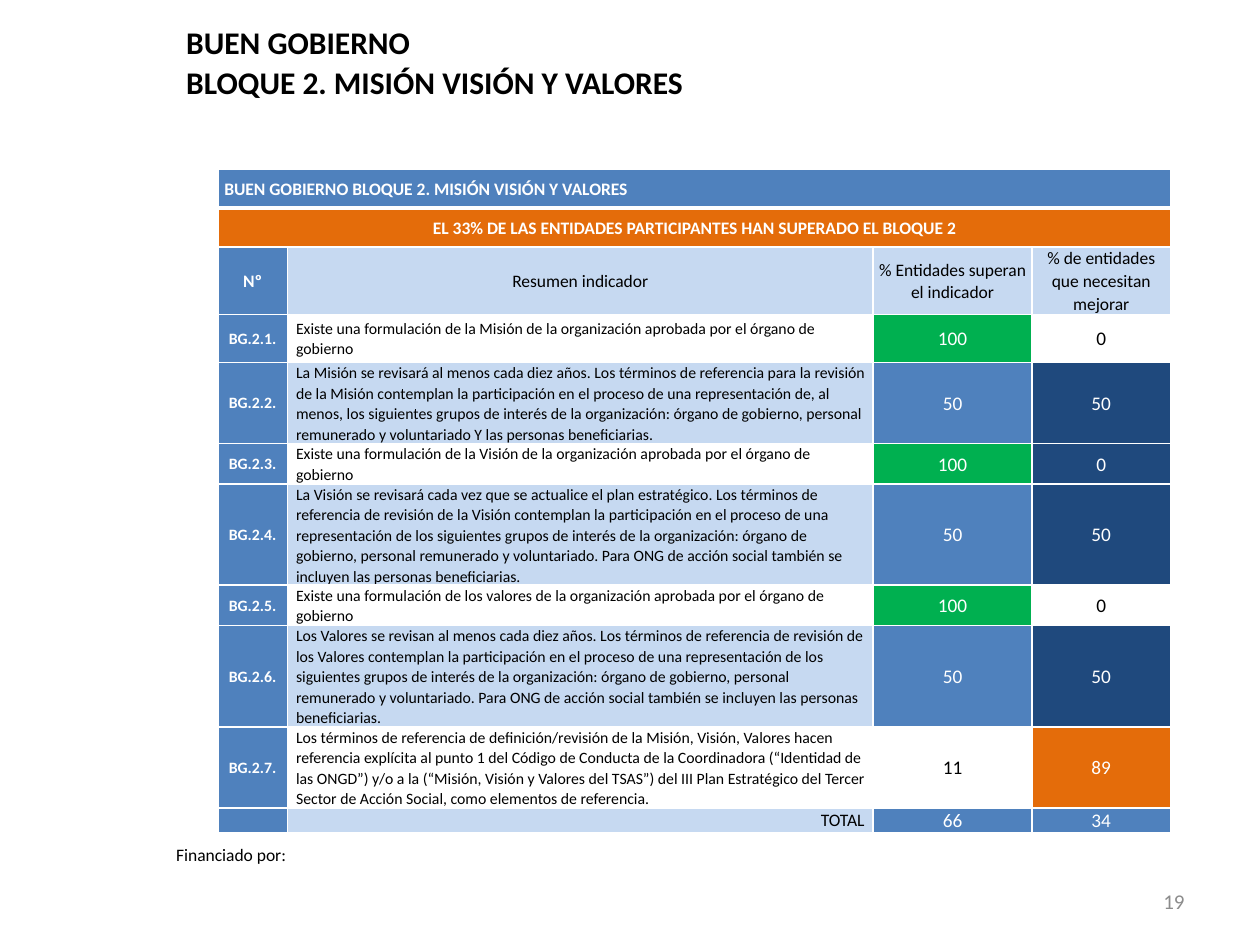
from lxml import etree
from pptx import Presentation
from pptx.dml.color import RGBColor
from pptx.enum.text import MSO_ANCHOR as Anchor, PP_ALIGN as Align
from pptx.oxml.ns import qn
from pptx.util import Inches, Pt

FONT = "Calibri"
WHITE = RGBColor(0xFF, 0xFF, 0xFF)
BLACK = RGBColor(0, 0, 0)
GRAY = RGBColor(0x8C, 0x8C, 0x8C)
BLUE = RGBColor(0x4F, 0x81, 0xBD)
NAVY = RGBColor(0x1F, 0x49, 0x7D)
PALE = RGBColor(0xC6, 0xD9, 0xF1)
GREEN = RGBColor(0x00, 0xB0, 0x50)
ORANGE = RGBColor(0xE4, 0x6C, 0x0A)

TITLE = "BLOQUE 2. MISIÓN VISIÓN Y VALORES"
COL_WIDTHS = [0.55, 4.65, 1.26, 1.1]
ROW_HEIGHTS = [0.31, 0.31, 0.53, 0.38, 0.64, 0.32, 0.8, 0.32, 0.8, 0.64, 0.19]
HEADINGS = ["Nº", "Resumen indicador", "% Entidades superan el indicador",
            "% de entidades que necesitan mejorar"]
# Summary, % that pass and its fill, % to improve and its fill
INDICATORS = [
    ("Existe una formulación de la Misión de la organización aprobada por el "
     "órgano de gobierno", 100, GREEN, 0, WHITE),
    ("La Misión se revisará al menos cada diez años. Los términos de referencia "
     "para la revisión de la Misión contemplan la participación en el proceso de "
     "una representación de, al menos, los siguientes grupos de interés de la "
     "organización: órgano de gobierno, personal remunerado y voluntariado Y las "
     "personas beneficiarias.", 50, BLUE, 50, NAVY),
    ("Existe una formulación de la Visión de la organización aprobada por el "
     "órgano de gobierno", 100, GREEN, 0, NAVY),
    ("La Visión se revisará cada vez que se actualice el plan estratégico. Los "
     "términos de referencia de revisión de la Visión contemplan la participación "
     "en el proceso de una representación de los siguientes grupos de interés de "
     "la organización: órgano de gobierno, personal remunerado y voluntariado. "
     "Para ONG de acción social también se incluyen las personas beneficiarias.",
     50, BLUE, 50, NAVY),
    ("Existe una formulación de los valores de la organización aprobada por el "
     "órgano de gobierno", 100, GREEN, 0, WHITE),
    ("Los Valores se revisan al menos cada diez años. Los términos de referencia "
     "de revisión de los Valores contemplan la participación en el proceso de una "
     "representación de los siguientes grupos de interés de la organización: "
     "órgano de gobierno, personal remunerado y voluntariado. Para ONG de acción "
     "social también se incluyen las personas beneficiarias.", 50, BLUE, 50, NAVY),
    ("Los términos de referencia de definición/revisión de la Misión, Visión, "
     "Valores hacen referencia explícita al punto 1 del Código de Conducta de la "
     "Coordinadora (“Identidad de las ONGD”) y/o a la (“Misión, Visión y Valores "
     "del TSAS”) del III Plan Estratégico del Tercer Sector de Acción Social, "
     "como elementos de referencia.", 11, WHITE, 89, ORANGE),
]


def write(tf, text, size=10, color=BLACK, bold=False, align=Align.LEFT, spacing=None):
    """Fill a text frame, one paragraph for each line of text."""
    for i, line in enumerate(text.split("\n")):
        p = tf.add_paragraph() if i else tf.paragraphs[0]
        p.alignment = align
        if spacing:
            p.line_spacing = spacing
        if line:
            r = p.add_run()
            r.text = line
            r.font.name, r.font.size, r.font.bold = FONT, Pt(size), bold
            r.font.color.rgb = color
        else:
            etree.SubElement(p._p, qn("a:endParaRPr"), sz=str(size * 100))


def add_text(slide, box, text, anchor=Anchor.TOP, **fmt):
    tf = slide.shapes.add_textbox(*map(Inches, box)).text_frame
    tf.word_wrap = True
    tf.vertical_anchor = anchor
    write(tf, text, **fmt)


def set_borders(cell, **widths):
    """White borders, 1 pt unless a side (L, R, T, B) is given a width."""
    tc_pr = cell._tc.get_or_add_tcPr()
    for i, side in enumerate("LRTB"):
        ln = etree.Element(qn(f"a:ln{side}"), w=str(Pt(widths.get(side, 1))))
        fill = etree.SubElement(ln, qn("a:solidFill"))
        etree.SubElement(fill, qn("a:srgbClr"), val=str(WHITE))
        tc_pr.insert(i, ln)


def fill_cell(cell, text, fill, margin=0.07, anchor=Anchor.MIDDLE, **fmt):
    cell.fill.solid()
    cell.fill.fore_color.rgb = fill
    cell.margin_left = cell.margin_right = Inches(margin)
    cell.margin_top = cell.margin_bottom = 0
    cell.vertical_anchor = anchor
    color = BLACK if fill in (WHITE, PALE) else WHITE
    write(cell.text_frame, text, color=color, spacing=1.07, **fmt)


def add_indicator_table(slide, box):
    frame = slide.shapes.add_table(len(ROW_HEIGHTS), len(COL_WIDTHS), *map(Inches, box))
    table = frame.table
    for col, width in zip(table.columns, COL_WIDTHS):
        col.width = Inches(width)
    for row, height in zip(table.rows, ROW_HEIGHTS):
        row.height = Inches(height)
    for r in range(len(ROW_HEIGHTS)):
        for c in range(len(COL_WIDTHS)):
            set_borders(table.cell(r, c), **{0: {"B": 3}, 1: {"T": 3}}.get(r, {}))

    # Banner rows across the whole width
    for r in (0, 1):
        table.cell(r, 0).merge(table.cell(r, 3))
    fill_cell(table.cell(0, 0), "BUEN GOBIERNO " + TITLE, BLUE, margin=0.05, bold=True)
    fill_cell(table.cell(1, 0),
              "EL 33% DE LAS ENTIDADES PARTICIPANTES HAN SUPERADO EL BLOQUE 2",
              ORANGE, margin=0.02, bold=True, align=Align.CENTER)

    # Column headings
    for c, heading in enumerate(HEADINGS):
        fill_cell(table.cell(2, c), heading, PALE if c else BLUE, margin=0.02,
                  bold=c == 0, align=Align.CENTER)

    # Indicators
    for n, (summary, passed, pass_fill, improve, improve_fill) in enumerate(INDICATORS, 1):
        r = n + 2
        fill_cell(table.cell(r, 0), f"BG.2.{n}.", BLUE, size=9, bold=True,
                  align=Align.CENTER)
        fill_cell(table.cell(r, 1), summary, WHITE if n % 2 else PALE, size=9,
                  anchor=Anchor.MIDDLE if n < 4 else Anchor.TOP)
        for c, value, fill in ((2, passed, pass_fill), (3, improve, improve_fill)):
            fill_cell(table.cell(r, c), str(value), fill, size=11, align=Align.CENTER)

    # Totals
    last = len(ROW_HEIGHTS) - 1
    fill_cell(table.cell(last, 0), "", BLUE, size=9)
    fill_cell(table.cell(last, 1), "TOTAL", PALE, align=Align.RIGHT)
    for c, value in ((2, "66"), (3, "34")):
        fill_cell(table.cell(last, c), value, BLUE, size=11, align=Align.CENTER)


def main():
    prs = Presentation()
    prs.slide_width, prs.slide_height = Inches(10), Inches(7.5)
    s = prs.slides.add_slide(prs.slide_layouts[6])
    # Footer
    add_text(s, (7.17, 6.95, 2.33, 0.4), "19", anchor=Anchor.MIDDLE, size=12,
             color=GRAY, align=Align.RIGHT)
    add_text(s, (1.3, 6.65, 1.99, 0.27), "Financiado por:")
    # Body and title
    add_indicator_table(s, (1.73, 1.34, 7.56, 5.24))
    add_text(s, (1.38, 0.11, 6.46, 0.75), "BUEN GOBIERNO\n" + TITLE, size=18,
             bold=True, spacing=1.07)
    prs.save("out.pptx")


if __name__ == "__main__":
    main()
